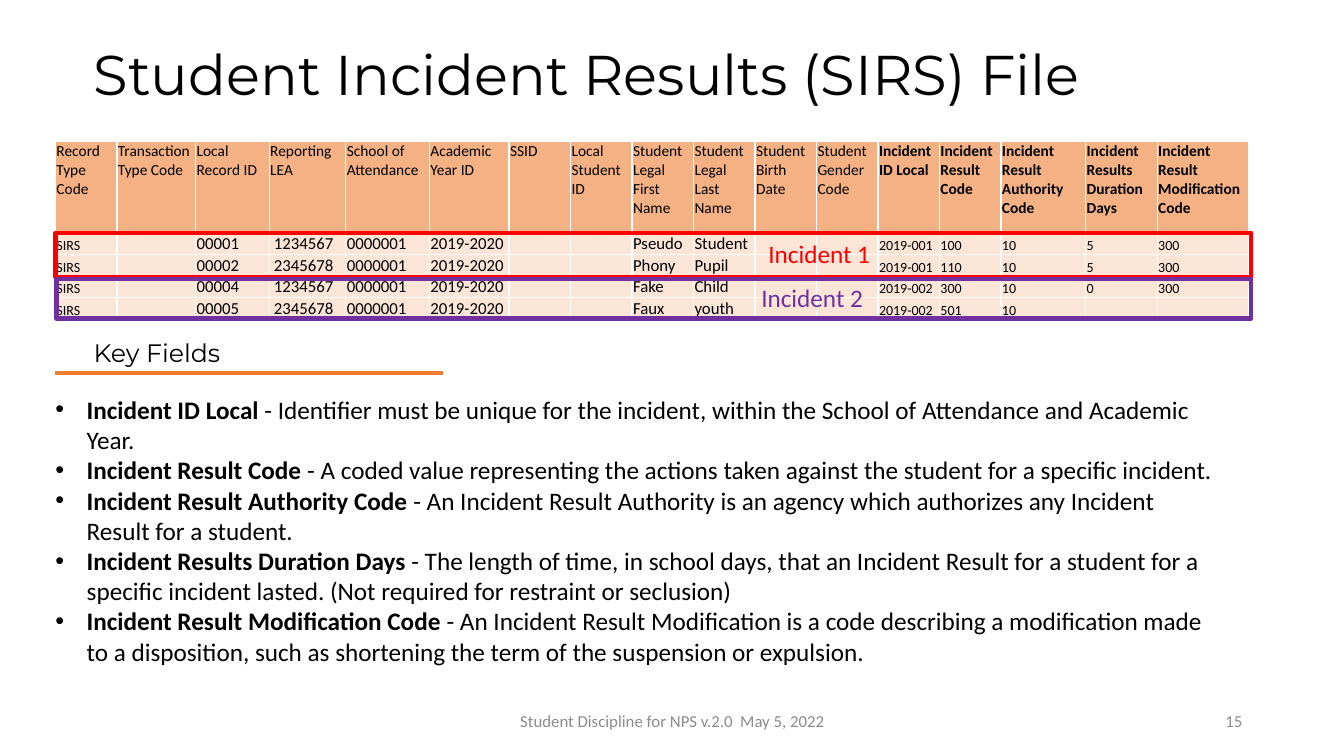
from lxml import etree
from pptx import Presentation
from pptx.dml.color import RGBColor
from pptx.enum.shapes import MSO_CONNECTOR, MSO_SHAPE
from pptx.enum.text import MSO_ANCHOR, MSO_AUTO_SIZE, PP_ALIGN
from pptx.oxml.ns import qn
from pptx.util import Inches, Pt

RECTANGLE, STRAIGHT = MSO_SHAPE.RECTANGLE, MSO_CONNECTOR.STRAIGHT
TOP, MIDDLE, BOTTOM = MSO_ANCHOR.TOP, MSO_ANCHOR.MIDDLE, MSO_ANCHOR.BOTTOM
LEFT, CENTER, RIGHT = PP_ALIGN.LEFT, PP_ALIGN.CENTER, PP_ALIGN.RIGHT
NO_AUTOFIT = MSO_AUTO_SIZE.NONE

BLACK = RGBColor(0x00, 0x00, 0x00)
GRAY = RGBColor(0x8C, 0x8C, 0x8C)
ORANGE = RGBColor(0xED, 0x7D, 0x31)
HEADER_FILL = RGBColor(0xF4, 0xB1, 0x83)
ROW_FILL = RGBColor(0xFB, 0xE5, 0xD6)
RED = RGBColor(0xFF, 0x00, 0x00)
PURPLE = RGBColor(0x70, 0x30, 0xA0)
HEADING_FONT, TEXT_FONT = "Montserrat", "Calibri"

# Content
TITLE = "Student Incident Results (SIRS) File"
COLUMNS = [  # heading, width
    ("Record Type Code", 0.61), ("Transaction Type Code", 0.78),
    ("Local Record ID", 0.73), ("Reporting LEA", 0.76),
    ("School of Attendance", 0.83), ("Academic Year ID", 0.79),
    ("SSID", 0.61), ("Local Student ID", 0.61),
    ("Student Legal First Name", 0.61), ("Student Legal Last Name", 0.61),
    ("Student Birth Date", 0.61), ("Student Gender Code", 0.61),
    ("Incident ID Local", 0.61), ("Incident Result Code", 0.61),
    ("Incident Result Authority Code", 0.84),
    ("Incident Results Duration Days", 0.71),
    ("Incident Result Modification Code", 0.91),
]
RECORDS = [
    ("SIRS", "", "00001", " 1234567", "0000001", "2019-2020", "", "", "Pseudo",
     "Student", "", "", "2019-001", "100", "10", "5", "300"),
    ("SIRS", "", "00002", " 2345678", "0000001", "2019-2020", "", "", "Phony",
     "Pupil", "", "", "2019-001", "110", "10", "5", "300"),
    ("SIRS", "", "00004", " 1234567", "0000001", "2019-2020", "", "", "Fake",
     "Child", "", "", "2019-002", "300", "10", "0", "300"),
    ("SIRS", "", "00005", " 2345678", "0000001", "2019-2020", "", "", "Faux",
     "youth", "", "", "2019-002", "501", "10", "", ""),
]
KEY_COLUMN = 12  # first of the key fields
INCIDENTS = [  # label, colour, frame box, label box
    ("Incident 1", RED, (0.55, 2.31, 11.86, 0.44), (7.47, 2.32, 1.31, 0.39)),
    ("Incident 2", PURPLE, (0.56, 2.77, 11.85, 0.39), (7.4, 2.76, 1.31, 0.39)),
]
KEY_HEADING = "Key Fields"
KEY_FIELDS = [
    ("Incident ID Local ", "- Identifier must be unique for the incident, within the "
     "School of Attendance and Academic Year."),
    ("Incident Result Code ", "- A coded value representing the actions taken against "
     "the student for a specific incident."),
    ("Incident Result Authority Code ", "- An Incident Result Authority is an agency "
     "which authorizes any Incident Result for a student."),
    ("Incident Results Duration Days ", "- The length of time, in school days, that an "
     "Incident Result for a student for a specific incident lasted. "
     "(Not required for restraint or seclusion)"),
    ("Incident Result Modification Code ", "- An Incident Result Modification is a code "
     "describing a modification made to a disposition, such as shortening the term of "
     "the suspension or expulsion."),
]
FOOTER = "Student Discipline for NPS v.2.0  May 5, 2022"
PAGE_NUMBER = "15"


def add_run(paragraph, text, size, color=BLACK, font=TEXT_FONT, bold=False):
    run = paragraph.add_run()
    run.text = text
    run.font.name = font
    run.font.size = Pt(size)
    run.font.bold = bold
    run.font.color.rgb = color


def place(shape, box):
    shape.left, shape.top, shape.width, shape.height = map(Inches, box)


def add_label(box, text, size, color=BLACK, font=TEXT_FONT, align=LEFT, anchor=MIDDLE):
    frame = slide.shapes.add_textbox(*map(Inches, box)).text_frame
    frame.word_wrap = True
    frame.vertical_anchor = anchor
    frame.paragraphs[0].alignment = align
    add_run(frame.paragraphs[0], text, size, color, font)


def fill_cell(cell, text, size, color, anchor, bold=False):
    cell.fill.solid()
    cell.fill.fore_color.rgb = color
    cell.margin_left = cell.margin_top = cell.margin_right = Inches(0.01)
    cell.margin_bottom = 0
    cell.vertical_anchor = anchor
    paragraph = cell.text_frame.paragraphs[0]
    if text:
        add_run(paragraph, text, size, bold=bold)
    else:  # keeps an empty cell from stretching its row
        etree.SubElement(paragraph._p, qn("a:endParaRPr"), sz=str(size * 100))


prs = Presentation()
prs.slide_width, prs.slide_height = Inches(13.33), Inches(7.5)
slide = prs.slides.add_slide(prs.slide_layouts[1])

# Title
title = slide.shapes.title
place(title, (0.83, 0.21, 11.5, 1.12))
title.text_frame.auto_size = NO_AUTOFIT
title.text_frame.vertical_anchor = MIDDLE
heading = title.text_frame.paragraphs[0]
heading.alignment = LEFT
heading.line_spacing = 0.9
add_run(heading, TITLE, 40, font=HEADING_FONT)

# Key field definitions
definitions = slide.placeholders[1]
place(definitions, (0.45, 3.86, 11.77, 2.95))
body = definitions.text_frame
body.auto_size = NO_AUTOFIT
for i, (field, meaning) in enumerate(KEY_FIELDS):
    item = body.add_paragraph() if i else body.paragraphs[0]
    item.space_before = Pt(0)
    properties = item._p.get_or_add_pPr()
    properties.set("marL", str(Inches(0.31)))
    properties.set("indent", str(-Inches(0.31)))
    add_run(item, field, 18, bold=True)
    add_run(item, meaning, 18)

# Records table
records = slide.shapes.add_table(
    len(RECORDS) + 1, len(COLUMNS), Inches(0.55), Inches(1.4), Inches(11.87), Inches(1.74)
).table
records.first_row = records.horz_banding = False
for r, row in enumerate(records.rows):
    row.height = Inches(0.18 if r else 0.91)
for c, (name, width) in enumerate(COLUMNS):
    records.columns[c].width = Inches(width)
    fill_cell(records.cell(0, c), name, 11, HEADER_FILL, TOP, bold=c >= KEY_COLUMN)
    size = 12 if 0 < c < KEY_COLUMN else 10
    for r, record in enumerate(RECORDS, start=1):
        fill_cell(records.cell(r, c), record[c], size, ROW_FILL, BOTTOM)

# Key Fields heading with its rule
add_label((0.83, 3.3, 5.98, 0.4), KEY_HEADING, 18, font=HEADING_FONT, anchor=TOP)
rule = slide.shapes.add_connector(
    STRAIGHT, Inches(0.55), Inches(3.7), Inches(4.39), Inches(3.7))
rule.line.color.rgb = ORANGE
rule.line.width = Pt(2.25)
etree.SubElement(rule._element.spPr, qn("a:effectLst"))

# Footer
add_label((4.42, 6.95, 4.5, 0.4), FOOTER, 12, GRAY, align=CENTER)
add_label((9.42, 6.95, 3, 0.4), PAGE_NUMBER, 12, GRAY, align=RIGHT)

# Incident frames and labels
for label, color, frame_box, label_box in INCIDENTS:
    incident = slide.shapes.add_shape(RECTANGLE, *map(Inches, frame_box))
    incident.shadow.inherit = False
    incident.fill.background()
    incident.line.color.rgb = color
    incident.line.width = Pt(3)
    add_label(label_box, label, 18, color, align=CENTER)

prs.save("out.pptx")
